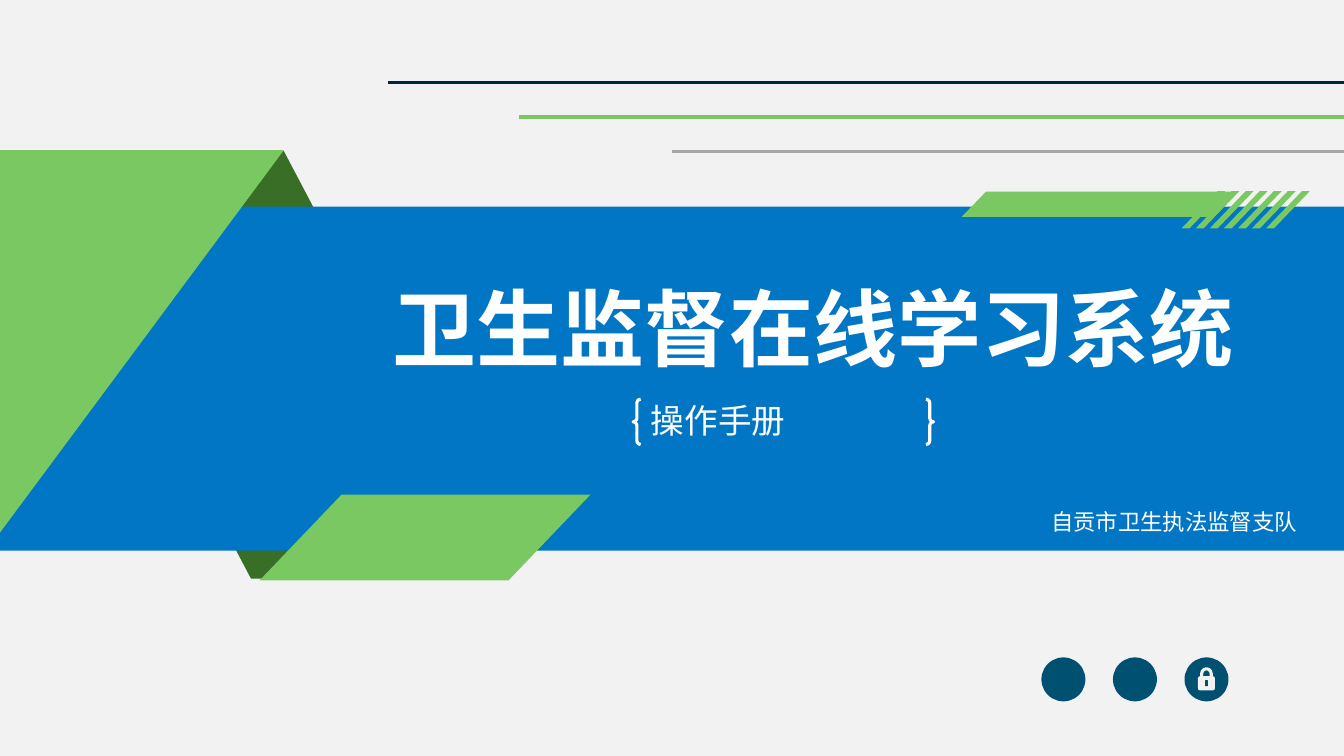
from lxml import etree
from pptx import Presentation
from pptx.dml.color import RGBColor
from pptx.enum import shapes, text
from pptx.oxml import ns
from pptx.util import Pt

COLORS = {
    "background": "F2F2F2",
    "blue": "0076C5",
    "green": "7AC861",
    "fold": "386E26",
    "navy": "002838",
    "gray": "A6A6A6",
    "icon": "005171",
    "white": "FFFFFF",
}
FONT = "Noto Sans CJK SC"
KIND = shapes.MSO_SHAPE


def color(name):
    return RGBColor.from_string(COLORS[name])


def style(shape, fill=None, line=None, weight=2.25):
    shape.shadow.inherit = False
    if fill:
        shape.fill.solid()
        shape.fill.fore_color.rgb = color(fill)
    else:
        shape.fill.background()
    if line:
        shape.line.color.rgb = color(line)
        shape.line.width = Pt(weight)
    else:
        shape.line.fill.background()


def add_preset(slide, kind, left, top, width, height, **format):
    shape = slide.shapes.add_shape(kind, Pt(left), Pt(top), Pt(width), Pt(height))
    style(shape, **format)
    return shape


def add_polygon(slide, points, fill):
    corners = [(Pt(x), Pt(y)) for x, y in points]
    builder = slide.shapes.build_freeform(*corners[0])
    builder.add_line_segments(corners[1:], close=True)
    style(builder.convert_to_shape(), fill=fill)


def add_slanted_bar(slide, left, top, width, height, slant, fill="green"):
    """Parallelogram leaning right; left and width describe its bottom edge."""
    bottom = top + height
    add_polygon(slide, [(left + slant, top), (left + slant + width, top),
                        (left + width, bottom), (left, bottom)], fill)


def add_rule(slide, left, y, line):
    connector = slide.shapes.add_connector(
        shapes.MSO_CONNECTOR.STRAIGHT, Pt(left), Pt(y), Pt(960), Pt(y))
    connector.line.color.rgb = color(line)
    connector.line.width = Pt(2.25)
    properties = connector._element.find(ns.qn("p:spPr"))
    etree.SubElement(properties, ns.qn("a:effectLst"))


def add_text(slide, content, left, top, width, height, size,
             bold=False, wrap=True, align=None):
    box = slide.shapes.add_textbox(Pt(left), Pt(top), Pt(width), Pt(height))
    frame = box.text_frame
    frame.word_wrap = wrap
    frame.auto_size = text.MSO_AUTO_SIZE.SHAPE_TO_FIT_TEXT
    paragraph = frame.paragraphs[0]
    paragraph.alignment = align
    run = paragraph.add_run()
    run.text = content
    run.font.size = Pt(size)
    run.font.bold = bold
    run.font.name = FONT
    run.font.color.rgb = color("white")
    east_asian = etree.SubElement(run.font._element, ns.qn("a:ea"))
    east_asian.set("typeface", FONT)


def add_lock(slide, center_x, center_y):
    shackle = add_preset(slide, KIND.ROUNDED_RECTANGLE, center_x - 3.4,
                         center_y - 7.6, 6.8, 10, line="background", weight=2.2)
    shackle.adjustments[0] = 0.5
    add_preset(slide, KIND.ROUNDED_RECTANGLE, center_x - 6.1, center_y - 2.3,
               12.2, 10.2, fill="background")
    add_preset(slide, KIND.ROUNDED_RECTANGLE, center_x - 1, center_y + 0.6,
               2, 4.3, fill="icon")


def main():
    presentation = Presentation()
    presentation.slide_width, presentation.slide_height = Pt(960), Pt(540)
    slide = presentation.slides.add_slide(presentation.slide_layouts[6])
    slide.background.fill.solid()
    slide.background.fill.fore_color.rgb = color("background")

    # Folded ribbon around the blue band
    add_polygon(slide, [(363.6, 413.3), (179.3, 413.3), (18, 108), (202.8, 108)],
                "fold")
    add_preset(slide, KIND.RECTANGLE, 0, 147.6, 960, 245.8, fill="blue")
    add_polygon(slide, [(202.8, 107.2), (-1.4, 382.3), (-1.4, 107.2)], "green")
    add_slanted_bar(slide, 185.5, 353.3, 177.8, 61.2, 58.5)

    # Titles
    add_text(slide, "卫生监督在线学习系统", 273.6, 193.7, 620.6, 79.9, 60,
             bold=True, wrap=False)
    add_preset(slide, KIND.DOUBLE_BRACE, 452.2, 285.1, 214.6, 32.4, line="white")
    justify = text.PP_ALIGN.JUSTIFY
    add_text(slide, "操作手册", 457.9, 282.2, 209.5, 36, 24, align=justify)
    add_text(slide, "自贡市卫生执法监督支队", 743.8, 359.3, 193, 26.6, 16,
             align=justify)

    # Rules running off to the right edge
    rules = [(277.2, "navy"), (370.8, "green"), (480, "gray")]
    for index, (left, line) in enumerate(rules):
        add_rule(slide, left, 59.2 + 24.4 * index, line)

    # Round icons
    for center_x in (759.6, 810.7, 861.8):
        add_preset(slide, KIND.OVAL, center_x - 15.7, 469.6, 31.4, 31.4, fill="icon")
    add_lock(slide, 861.8, 485.3)

    # Slanted bar with stripes
    add_slanted_bar(slide, 686.9, 136.8, 177.1, 18.1, 17.5)
    for index in range(7):
        add_slanted_bar(slide, 844 + 10.05 * index, 136.6, 5.6, 26.6, 25.6)

    presentation.save("out.pptx")


if __name__ == "__main__":
    main()
